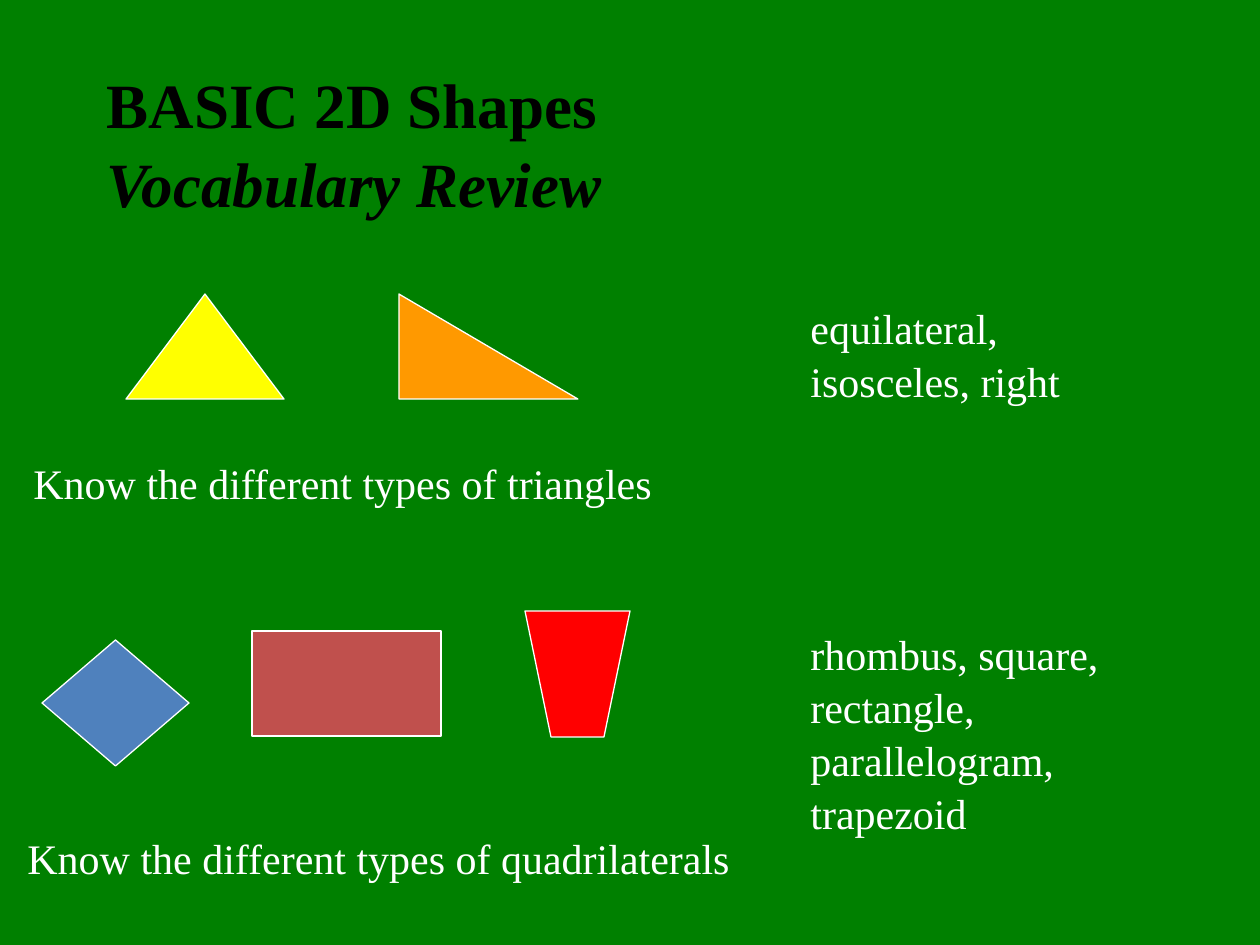
from pptx import Presentation
from pptx.dml.color import RGBColor
from pptx.enum.shapes import MSO_SHAPE
from pptx.enum.text import MSO_ANCHOR, MSO_AUTO_SIZE, PP_ALIGN
from pptx.util import Pt

PX = 914400 / 126
COLORS = {
    "green": "008000", "white": "FFFFFF", "black": "000000",
    "yellow": "FFFF00", "orange": "FF9900", "blue": "4F81BD",
    "brick": "C0504D", "red": "FF0000",
}


def color(name):
    return RGBColor.from_string(COLORS[name])


def write(box, lines, size=24, ink="white", bold=False, italics=(), wrap=True):
    frame = box.text_frame
    frame.word_wrap = wrap
    frame.auto_size = MSO_AUTO_SIZE.NONE
    frame.vertical_anchor = MSO_ANCHOR.TOP
    for i, line in enumerate(lines):
        para = frame.paragraphs[0] if i == 0 else frame.add_paragraph()
        para.alignment = PP_ALIGN.LEFT
        para.line_spacing = 1.05
        para.space_before = Pt(0)
        run = para.add_run()
        run.text = line
        font = run.font
        font.name = "Times New Roman"
        font.size = Pt(size)
        font.bold = bold
        font.italic = i in italics
        font.color.rgb = color(ink)


deck = Presentation()
deck.slide_width = round(1260 * PX)
deck.slide_height = round(945 * PX)
slide = deck.slides.add_slide(deck.slide_layouts[5])
slide.background.fill.solid()
slide.background.fill.fore_color.rgb = color("green")

title = slide.shapes.title
title.left, title.top, title.width, title.height = [
    round(n * PX) for n in (94, 55, 973, 165)]
write(title, ["BASIC 2D Shapes", "Vocabulary Review"],
      size=36, ink="black", bold=True, italics=(1,))

notes = [
    ((21, 449, 924, 64), ["Know the different types of triangles"], True),
    ((798, 294, 382, 202), ["equilateral, isosceles, right"], True),
    ((798, 620, 420, 265),
     ["rhombus, square, rectangle,", "parallelogram, trapezoid"], True),
    ((15, 824, 1092, 66), ["Know the different types of quadrilaterals"], False),
]
for place, lines, wrap in notes:
    box = slide.shapes.add_textbox(*[round(n * PX) for n in place])
    write(box, lines, wrap=wrap)

figures = [
    (MSO_SHAPE.ISOSCELES_TRIANGLE, (126, 294, 158, 105), "yellow"),
    (MSO_SHAPE.RIGHT_TRIANGLE, (399, 294, 179, 105), "orange"),
    (MSO_SHAPE.DIAMOND, (42, 640, 147, 126), "blue"),
    (MSO_SHAPE.RECTANGLE, (252, 631, 189, 105), "brick"),
]
drawn = []
for kind, place, fill in figures:
    shape = slide.shapes.add_shape(kind, *[round(n * PX) for n in place])
    drawn.append((shape, fill))

path = slide.shapes.build_freeform(525, 611, scale=PX)
path.add_line_segments([(551, 737), (604, 737), (630, 611)], close=True)
drawn.append((path.convert_to_shape(), "red"))

for shape, fill in drawn:
    shape.shadow.inherit = False
    shape.fill.solid()
    shape.fill.fore_color.rgb = color(fill)
    shape.line.color.rgb = color("white")
    shape.line.width = Pt(0.75)

deck.save("out.pptx")
